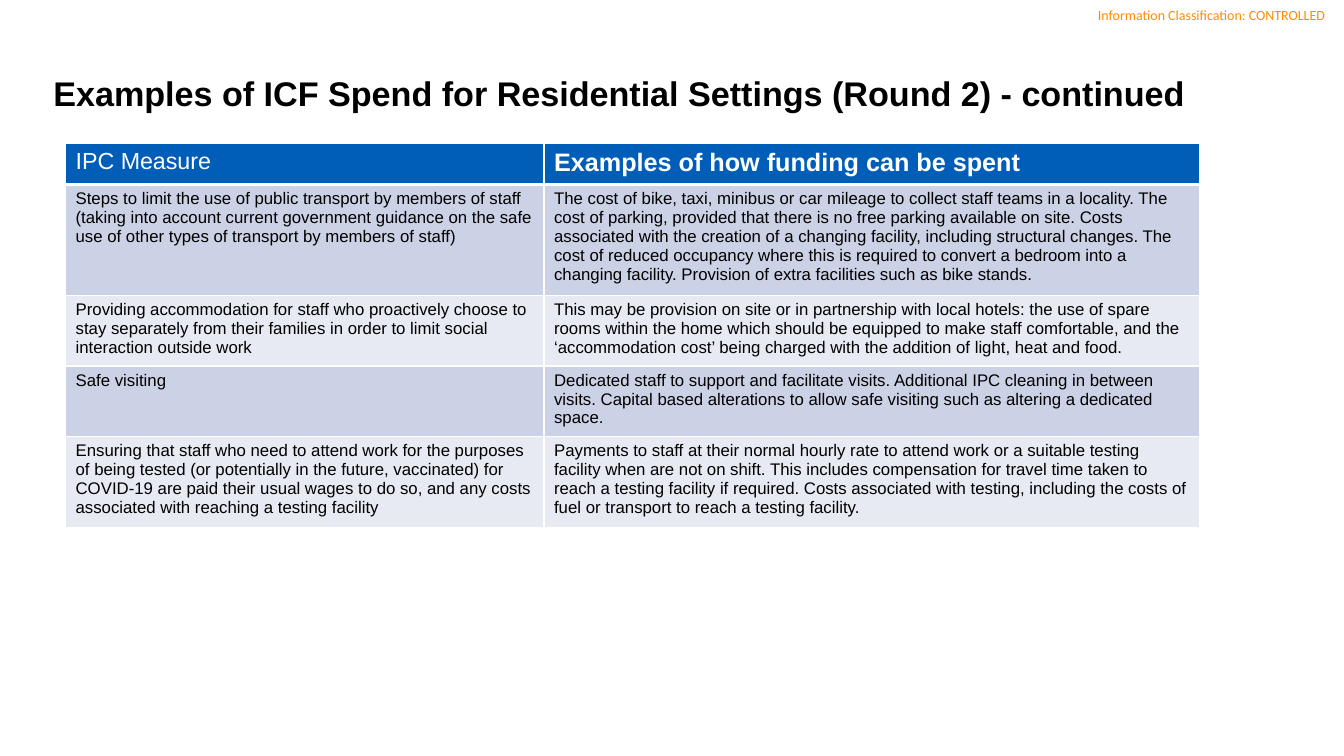
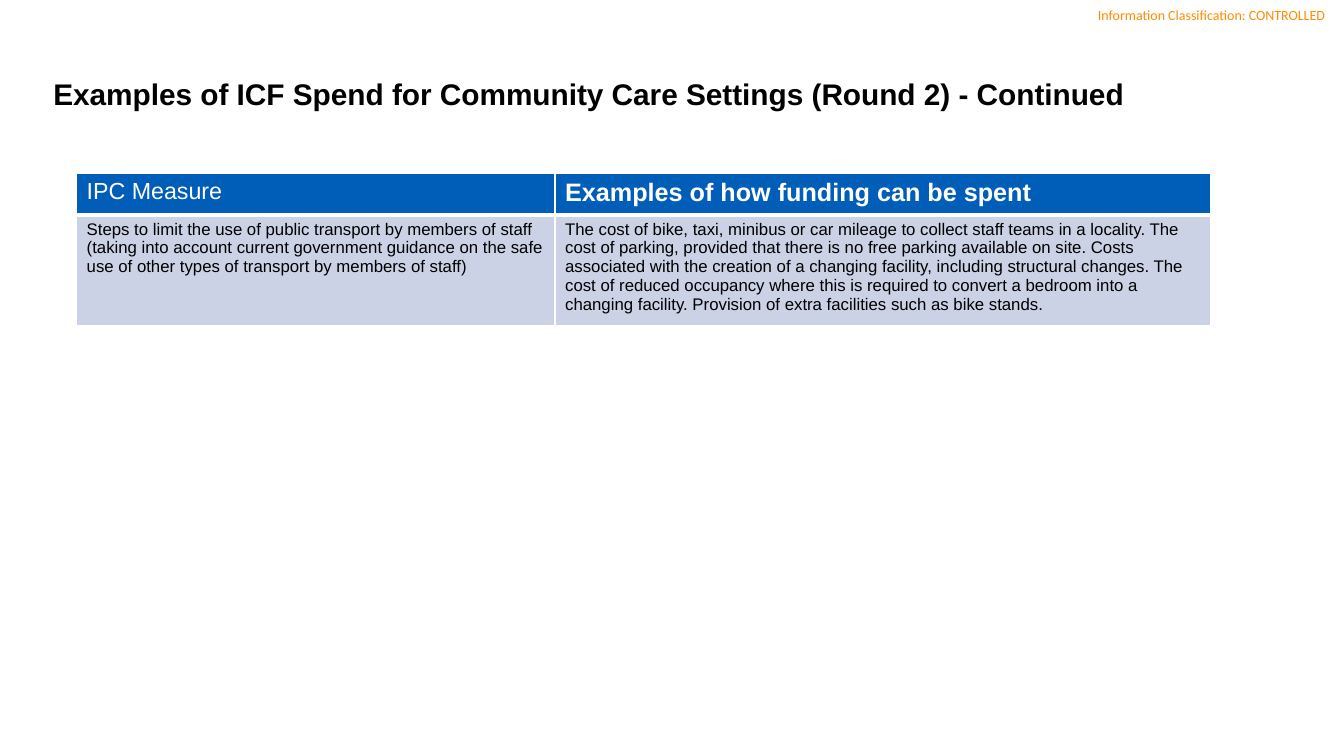
from lxml.etree import SubElement
from pptx import Presentation
from pptx.dml.color import RGBColor
from pptx.enum.text import MSO_ANCHOR, PP_ALIGN
from pptx.oxml.ns import qn
from pptx.util import Inches, Pt

# Shared look
W, H = Inches(13.33), Inches(7.5)
BLACK, WHITE, ORANGE = "000000", "FFFFFF", "FF8C00"
HEADER, BANDS = "005EB8", ("CCD2E6", "E7EAF3")

# Table grid, in percent of the slide width or height
COLS = (35.6, 48.8)
HEADER_ROW, LINE, ROW_PAD = 5.47, 2.67, 1.33

# Table text: measure, example, number of text lines in the row
HEADINGS = ("IPC Measure", "Examples of how funding can be spent")
TRANSPORT = (
    "Steps to limit the use of public transport by members of staff (taking into account "
    "current government guidance on the safe use of other types of transport by members "
    "of staff)",
    "The cost of bike, taxi, minibus or car mileage to collect staff teams in a locality. "
    "The cost of parking, provided that there is no free parking available on site. Costs "
    "associated with the creation of a changing facility, including structural changes. "
    "The cost of reduced occupancy where this is required to convert a bedroom into a "
    "changing facility. Provision of extra facilities such as bike stands.", 5)
ACCOMMODATION = (
    "Providing accommodation for staff who proactively choose to stay separately from "
    "their families in order to limit social interaction outside work",
    "This may be provision on site or in partnership with local hotels: the use of spare "
    "rooms within the home which should be equipped to make staff comfortable, and the "
    "‘accommodation cost’ being charged with the addition of light, heat and food.", 3)
VISITING = (
    "Safe visiting",
    "Dedicated staff to support and facilitate visits. Additional IPC cleaning in between "
    "visits. Capital based alterations to allow safe visiting such as altering a "
    "dedicated space.", 3)
TESTING = (
    "Ensuring that staff who need to attend work for the purposes of being tested (or "
    "potentially in the future, vaccinated) for COVID-19 are paid their usual wages to do "
    "so, and any costs associated with reaching a testing facility",
    "Payments to staff at their normal hourly rate to attend work or a suitable testing "
    "facility when are not on shift. This includes compensation for travel time taken to "
    "reach a testing facility if required. Costs associated with testing, including the "
    "costs of fuel or transport to reach a testing facility.", 4)


def px(share):
    return round(W * share / 100)


def py(share):
    return round(H * share / 100)


def color(hex_string):
    return RGBColor.from_string(hex_string)


def write(tf, text, size=12, fill=BLACK, bold=False, font="Arial", align=PP_ALIGN.LEFT):
    p = tf.paragraphs[0]
    p.alignment = align
    r = p.add_run()
    r.text = text
    r.font.name, r.font.size, r.font.bold = font, Pt(size), bold
    r.font.color.rgb = color(fill)


def text_box(s, x, y, w, h, text, margins=None, **fmt):
    tf = s.shapes.add_textbox(px(x), py(y), px(w), py(h)).text_frame
    tf.word_wrap = True
    tf.vertical_anchor = MSO_ANCHOR.MIDDLE
    if margins:
        tf.margin_left, tf.margin_top, tf.margin_right, tf.margin_bottom = margins
    write(tf, text, **fmt)


def cell_borders(cell, top=1, bottom=1):
    tc_pr = cell._tc.get_or_add_tcPr()
    for side, width in (("L", 1), ("R", 1), ("T", top), ("B", bottom)):
        ln = SubElement(tc_pr, qn(f"a:ln{side}"), w=str(Pt(width)))
        SubElement(SubElement(ln, qn("a:solidFill")), qn("a:srgbClr"), val=WHITE)


def fill_cell(cell, text, back, top=1, bottom=1, **fmt):
    cell_borders(cell, top, bottom)
    cell.fill.solid()
    cell.fill.fore_color.rgb = color(back)
    write(cell.text_frame, text, **fmt)


def measure_table(s, x, y, rows):
    heights = [HEADER_ROW] + [ROW_PAD + LINE * lines for *_, lines in rows]
    tbl = s.shapes.add_table(len(heights), len(COLS), px(x), py(y),
                             px(sum(COLS)), py(sum(heights))).table
    for col, share in zip(tbl.columns, COLS):
        col.width = px(share)
    for row, share in zip(tbl.rows, heights):
        row.height = py(share)
    # Heading row, with a thick rule below
    for c, (text, size, bold) in enumerate(zip(HEADINGS, (16.6, 18), (False, True))):
        fill_cell(tbl.cell(0, c), text, HEADER, bottom=3, size=size, fill=WHITE, bold=bold)
    # Banded body rows
    for i, (*texts, _) in enumerate(rows):
        for c, text in enumerate(texts):
            fill_cell(tbl.cell(i + 1, c), text, BANDS[i % 2], top=1 if i else 3)


def new_slide(prs, title, size):
    s = prs.slides.add_slide(prs.slide_layouts[6])
    # Classification label
    text_box(s, 80.3, 0, 19.7, 3.87, "Information Classification: CONTROLLED",
             margins=(0, 0, Inches(0.19), 0), size=10, fill=ORANGE, font="Calibri",
             align=PP_ALIGN.RIGHT)
    # Title
    text_box(s, 3.23, 8.67, 89.35, 7.33, title, size=size, bold=True)
    return s


def main():
    prs = Presentation()
    prs.slide_width, prs.slide_height = W, H

    # Residential settings
    s = new_slide(prs, "Examples of ICF Spend for Residential Settings (Round 2) - continued", 24.4)
    measure_table(s, 4.88, 18.93, (TRANSPORT, ACCOMMODATION, VISITING, TESTING))

    # Community care settings
    s = new_slide(prs, "Examples of ICF Spend for Community Care Settings (Round 2) - Continued", 21.3)
    measure_table(s, 5.7, 22.93, (TRANSPORT,))

    prs.save("out.pptx")


if __name__ == "__main__":
    main()
